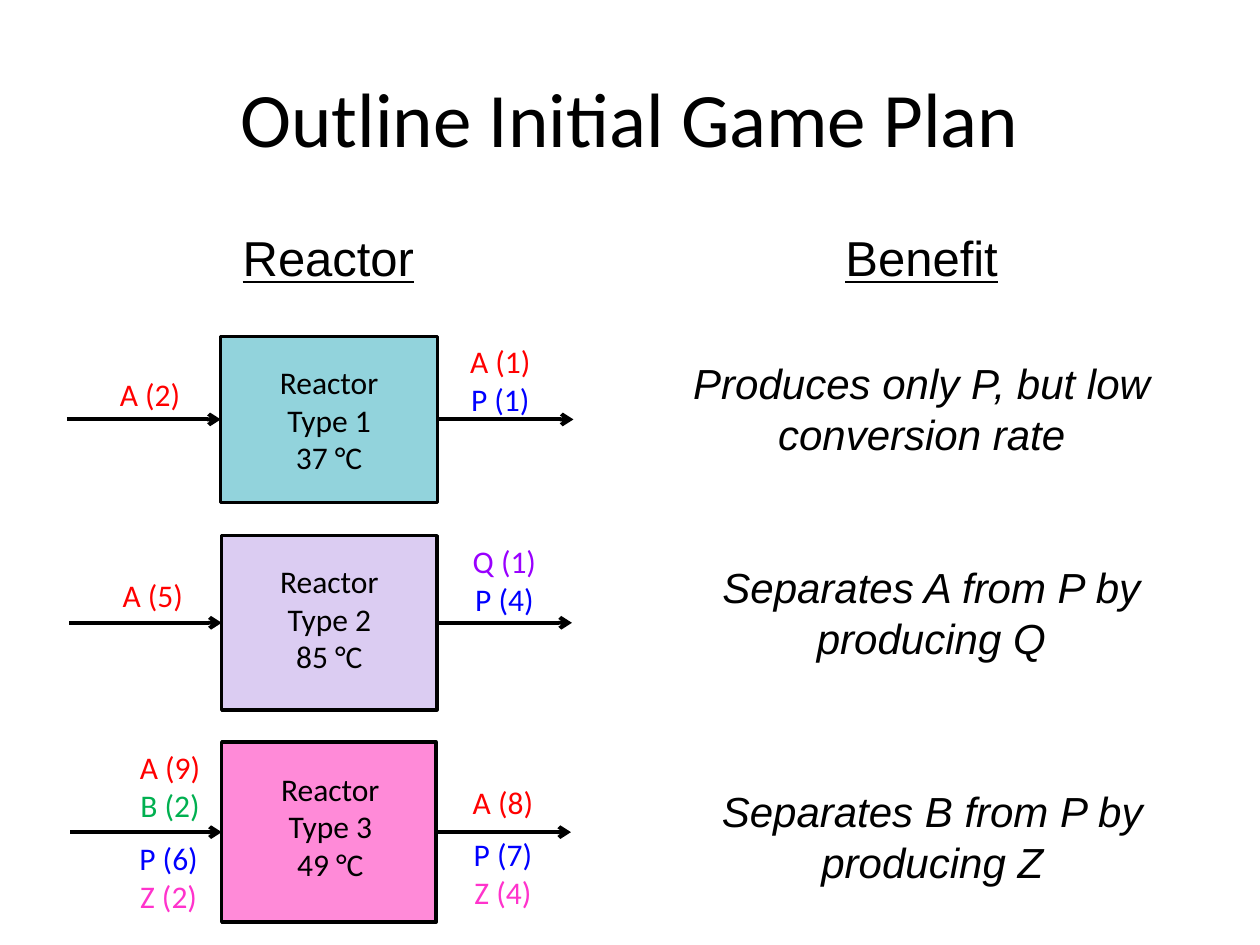
from lxml import etree
from pptx import Presentation
from pptx.dml.color import RGBColor
from pptx.enum.shapes import MSO_CONNECTOR, MSO_SHAPE
from pptx.enum.text import MSO_ANCHOR, MSO_AUTO_SIZE, PP_ALIGN
from pptx.oxml.ns import qn
from pptx.util import Cm, Pt

BLACK = RGBColor(0x00, 0x00, 0x00)
RED = RGBColor(0xFF, 0x00, 0x00)
BLUE = RGBColor(0x00, 0x00, 0xFF)
GREEN = RGBColor(0x00, 0xB0, 0x50)
PURPLE = RGBColor(0x99, 0x00, 0xFF)
PINK = RGBColor(0xFF, 0x33, 0xCC)
TEAL_FILL = RGBColor(0x92, 0xD3, 0xDC)
LILAC_FILL = RGBColor(0xDB, 0xCC, 0xF2)
PINK_FILL = RGBColor(0xFF, 0x8A, 0xD8)
SPECIES_COLORS = {"A": RED, "B": GREEN, "P": BLUE, "Q": PURPLE, "Z": PINK}

presentation = Presentation()
presentation.slide_width = Cm(25.4)
presentation.slide_height = Cm(19.05)
slide = presentation.slides.add_slide(presentation.slide_layouts[5])


def add_text(left, top, width, height, lines, font_name="Calibri", size=18,
             italic=None, underline=None):
    """Add a centred text box; lines holds (text, colour) pairs, one per paragraph."""
    box = slide.shapes.add_textbox(Cm(left), Cm(top), Cm(width), Cm(height))
    frame = box.text_frame
    frame.word_wrap = True
    frame.auto_size = MSO_AUTO_SIZE.SHAPE_TO_FIT_TEXT
    for index, (text, color) in enumerate(lines):
        paragraph = frame.add_paragraph() if index else frame.paragraphs[0]
        paragraph.alignment = PP_ALIGN.CENTER
        run = paragraph.add_run()
        run.text = text
        run.font.name = font_name
        run.font.size = Pt(size)
        run.font.color.rgb = color
        run.font.italic = italic
        run.font.underline = underline


def add_arrow(start_x, end_x, y):
    arrow = slide.shapes.add_connector(
        MSO_CONNECTOR.STRAIGHT, Cm(start_x), y, Cm(end_x), y)
    arrow.line.color.rgb = BLACK
    arrow.line.width = Pt(2.25)
    etree.SubElement(arrow.line._get_or_add_ln(), qn("a:tailEnd"), type="arrow")
    etree.SubElement(arrow._element.spPr, qn("a:effectLst"))
    return arrow


title = slide.shapes.title
title.left, title.top, title.width, title.height = Cm(1.27), Cm(0.76), Cm(22.86), Cm(3.18)
title.text_frame.vertical_anchor = MSO_ANCHOR.MIDDLE
title_paragraph = title.text_frame.paragraphs[0]
title_paragraph.alignment = PP_ALIGN.CENTER
title_run = title_paragraph.add_run()
title_run.text = "Outline Initial Game Plan"
title_run.font.name = "Calibri"
title_run.font.size = Pt(44)
title_run.font.color.rgb = BLACK

# Box (left, top, width, height), fill, arrow ends, caption (left, top), caption lines,
# line height, and the streams as (left, top, species)
reactors = [
    ((4.45, 6.78, 4.37, 3.35), TEAL_FILL, (1.35, 11.56), (4.45, 7.19),
     ["Reactor", "Type 1", "37 °C"],
     [(0.84, 7.44, ["A (2)"]), (7.9, 6.78, ["A (1)", "P (1)"])]),
    ((4.47, 10.8, 4.34, 3.51), LILAC_FILL, (1.4, 11.53), (4.47, 11.2),
     ["Reactor", "Type 2", "85 °C"],
     [(0.91, 11.48, ["A (5)"]), (8, 10.8, ["Q (1)", "P (4)"])]),
    ((4.47, 14.96, 4.32, 3.63), PINK_FILL, (1.42, 11.51), (4.5, 15.39),
     ["Reactor", "Type 3", "49 °C"],
     [(1.27, 14.96, ["A (9)", "B (2)"]), (1.24, 16.79, ["P (6)", "Z (2)"]),
      (7.98, 16.71, ["P (7)", "Z (4)"]), (7.98, 15.67, ["A (8)"])]),
]
for (left, top, width, height), fill, (feed_x, product_x), caption_at, caption, streams in reactors:
    reactor = slide.shapes.add_shape(
        MSO_SHAPE.RECTANGLE, Cm(left), Cm(top), Cm(width), Cm(height))
    reactor.shadow.inherit = False
    reactor.fill.solid()
    reactor.fill.fore_color.rgb = fill
    reactor.line.color.rgb = BLACK
    reactor.line.width = Pt(2)

    middle = Cm(top + height / 2)
    add_arrow(feed_x, left, middle).end_connect(reactor, 1)
    add_arrow(left + width, product_x, middle).begin_connect(reactor, 3)

    add_text(*caption_at, width, 2.6, [(line, BLACK) for line in caption])
    for stream_left, stream_top, species in streams:
        add_text(stream_left, stream_top, width, 0.25 + 0.8 * len(species),
                 [(name, SPECIES_COLORS[name[0]]) for name in species])

for left, heading in [(0.74, "Reactor"), (12.7, "Benefit")]:
    add_text(left, 4.47, 11.76, 1.45, [(heading, BLACK)], "Arial", 28, underline=True)

benefits = [
    (12.7, 7.09, 11.76, "Produces only P, but low conversion rate"),
    (13.06, 11.2, 11.43, "Separates A from P by producing Q"),
    (13.13, 15.72, 11.33, "Separates B from P by producing Z"),
]
for left, top, width, benefit in benefits:
    add_text(left, top, width, 2.31, [(benefit, BLACK)], "Arial", 24, italic=True)

presentation.save("out.pptx")
